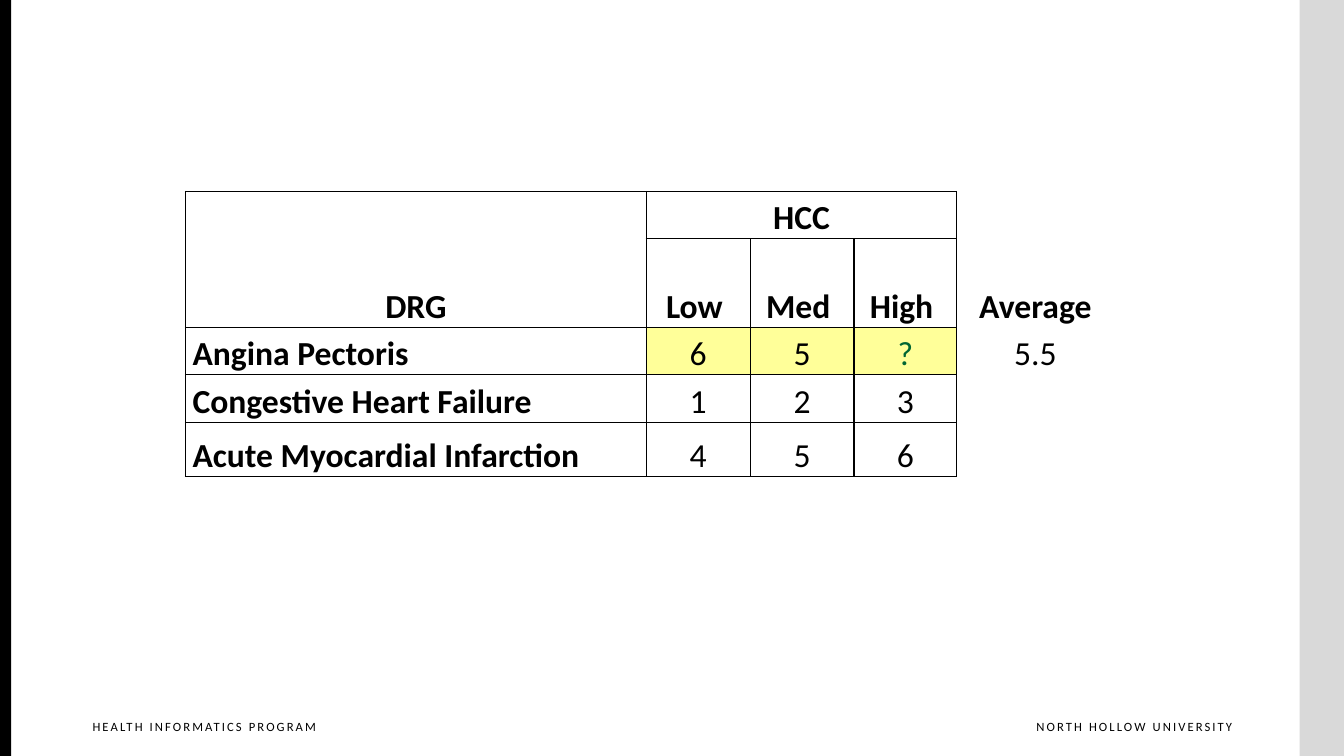
from lxml.etree import SubElement
from pptx import Presentation
from pptx.dml.color import RGBColor
from pptx.enum.shapes import MSO_SHAPE as Shape
from pptx.enum.text import MSO_ANCHOR as Anchor, PP_ALIGN as Align
from pptx.oxml.ns import qn
from pptx.util import Inches, Pt


def color(value):
    return RGBColor.from_string(value)


def set_border(cell, side, visible):
    line = SubElement(cell._tc.get_or_add_tcPr(), qn(f"a:ln{side}"), w=str(Pt(1)))
    if visible:
        fill = SubElement(line, qn("a:solidFill"))
        SubElement(fill, qn("a:srgbClr"), val="000000")
    else:
        SubElement(line, qn("a:noFill"))


prs = Presentation()
prs.slide_width = Inches(13.33)
prs.slide_height = Inches(7.5)
slide = prs.slides.add_slide(prs.slide_layouts[6])

# Side bars
for left, width, bar_color in [(12.89, 0.44, "D9D9D9"), (0, 0.11, "000000")]:
    bar = slide.shapes.add_shape(Shape.RECTANGLE, Inches(left), 0, Inches(width), Inches(7.5))
    bar.shadow.inherit = False
    bar.fill.solid()
    bar.fill.fore_color.rgb = color(bar_color)
    bar.line.fill.background()

# Footer
for left, width, align, label in [
    (9.87, 2.35, Align.RIGHT, "NORTH HOLLOW UNIVERSITY"),
    (0.82, 2.54, Align.LEFT, "HEALTH INFORMATICS PROGRAM"),
]:
    footer = slide.shapes.add_textbox(Inches(left), Inches(7.08), Inches(width), Inches(0.33)).text_frame
    footer.word_wrap = True
    footer.margin_right = 0
    paragraph = footer.paragraphs[0]
    paragraph.alignment = align
    run = paragraph.add_run()
    run.text = label
    run._r.get_or_add_rPr().set("spc", "150")
    paragraph.font.name = "Calibri"
    paragraph.font.size = Pt(9)
    paragraph.font.color.rgb = color("000000")

# Severity table
column_widths = [4.57, 1.03, 1.03, 1.02, 1.56]
row_heights = [0.47, 0.88, 0.47, 0.47, 0.54, 0.47]
rows = [
    ["DRG", "HCC", "", "", "Average"],
    ["", "Low ", "Med ", "High ", ""],
    ["Angina Pectoris", "6", "5", "?", "5.5"],
    ["Congestive Heart Failure", "1", "2", "3", ""],
    ["Acute Myocardial Infarction", "4", "5", "6", ""],
    ["", "", "", "", ""],
]
table = slide.shapes.add_table(
    len(rows), len(column_widths), Inches(1.84), Inches(1.9), Inches(9.21), Inches(3.3)
).table
table.first_row = False
table.horz_banding = False
for column, width in zip(table.columns, column_widths):
    column.width = Inches(width)
for row, height in zip(table.rows, row_heights):
    row.height = Inches(height)

# Merged headings: DRG, HCC and Average
for first, last in [((0, 0), (1, 0)), ((0, 1), (0, 3)), ((0, 4), (1, 4))]:
    table.cell(*first).merge(table.cell(*last))

for r, values in enumerate(rows):
    for c, value in enumerate(values):
        cell = table.cell(r, c)
        cell.vertical_anchor = Anchor.BOTTOM
        cell.margin_left = cell.margin_right = Inches(0.07)
        cell.margin_top = cell.margin_bottom = 0

        # The grid covers all but the last row and column
        in_grid = r < 5 and c < 4
        set_border(cell, "L", r < 5)
        set_border(cell, "R", in_grid)
        set_border(cell, "T", c < 4)
        set_border(cell, "B", in_grid)

        if r == 2 and 1 <= c <= 3:
            cell.fill.solid()
            cell.fill.fore_color.rgb = color("FFFF99")
        else:
            cell.fill.background()

        if value:
            cell.text = value
            paragraph = cell.text_frame.paragraphs[0]
            paragraph.alignment = Align.LEFT if c == 0 and r > 1 else Align.CENTER
            paragraph.line_spacing = 1.07
            paragraph.font.name = "Calibri"
            paragraph.font.size = Pt(24)
            paragraph.font.bold = r < 2 or c == 0
            paragraph.font.color.rgb = color("006633" if value == "?" else "000000")

prs.save("out.pptx")
